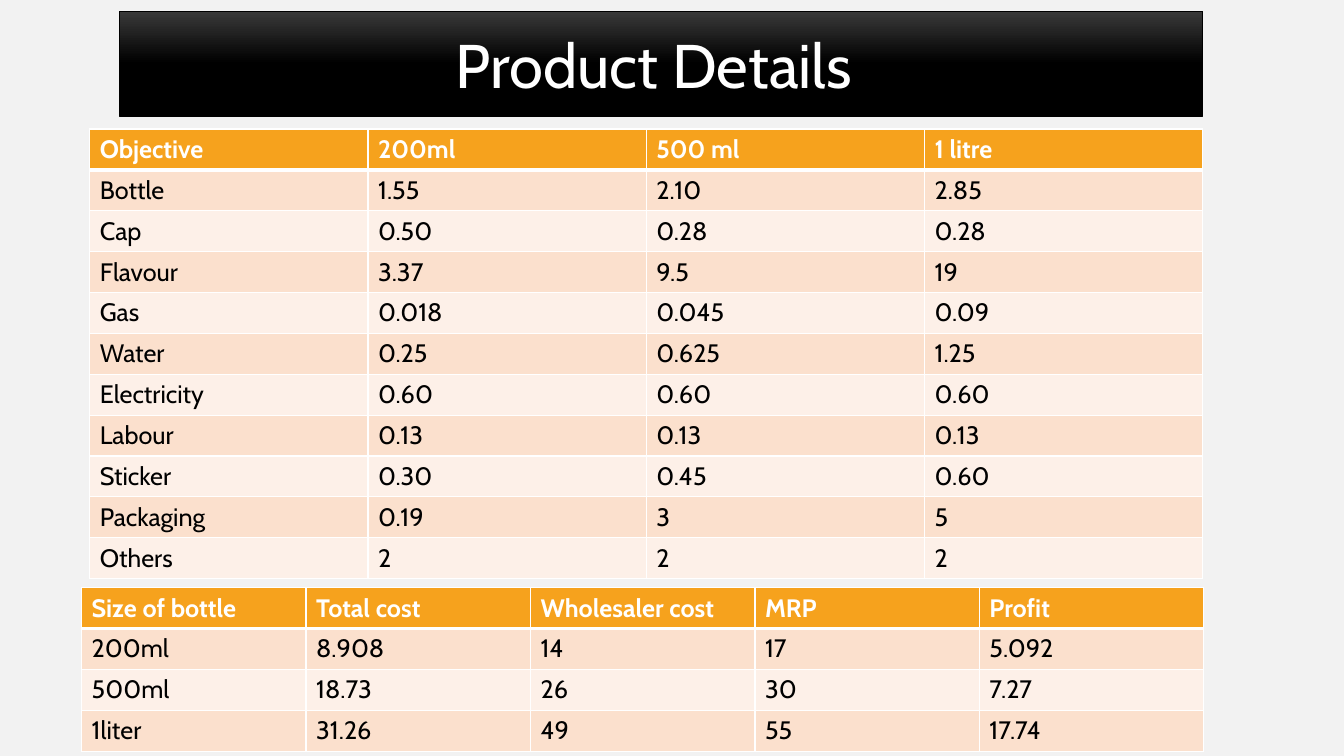
from dataclasses import dataclass

from lxml import etree
from pptx import Presentation
from pptx import util as u
from pptx.dml.color import RGBColor
from pptx.enum import text
from pptx.oxml import ns


@dataclass(frozen=True)
class Theme:
    """Colours, font and type sizes of the slide."""
    font: str = "Cabin"
    background: str = "F2F2F2"
    banner_top: str = "393939"
    black: str = "000000"
    white: str = "FFFFFF"
    header: str = "F6A21D"
    bands: tuple = ("FBE0CD", "FDF0E8")
    title_size: int = 44
    table_size: int = 18


THEME = Theme()
ROW_HEIGHT = 40

UNIT_COSTS = [
    ("Objective", "200ml", "500 ml", "1 litre"),
    ("Bottle", "1.55", "2.10", "2.85"),
    ("Cap", "0.50", "0.28", "0.28"),
    ("Flavour", "3.37", "9.5", "19"),
    ("Gas", "0.018", "0.045", "0.09"),
    ("Water", "0.25", "0.625", "1.25"),
    ("Electricity", "0.60", "0.60", "0.60"),
    ("Labour", "0.13", "0.13", "0.13"),
    ("Sticker", "0.30", "0.45", "0.60"),
    ("Packaging", "0.19", "3", "5"),
    ("Others", "2", "2", "2"),
]
BOTTLE_PRICES = [
    ("Size of bottle", "Total cost", "Wholesaler cost", "MRP", "Profit"),
    ("200ml", "8.908", "14", "17", "5.092"),
    ("500ml", "18.73", "26", "30", "7.27"),
    ("1liter", "31.26", "49", "55", "17.74"),
]


def px(length):
    """Turn px, at 100 to the inch, into EMU."""
    return u.Emu(length * 9144)


def write(frame, words, size, color, bold=False, align=text.PP_ALIGN.LEFT):
    """Put one formatted line of text into a text frame."""
    line = frame.paragraphs[0]
    line.alignment = align
    run = line.add_run()
    run.text = words
    run.font.name = THEME.font
    run.font.size = u.Pt(size)
    run.font.bold = bold
    run.font.color.rgb = RGBColor.from_string(color)


def add_banner(slide, box, words):
    """Place the title in a dark gradient banner."""
    banner = slide.shapes.title
    banner.left, banner.top, banner.width, banner.height = map(px, box)
    banner.fill.gradient()
    banner.fill.gradient_angle = 270
    shades = ((0, THEME.banner_top), (0.5, THEME.black))
    for stop, (position, color) in zip(banner.fill.gradient_stops, shades):
        stop.position = position
        stop.color.rgb = RGBColor.from_string(color)
    banner.line.color.rgb = RGBColor.from_string(THEME.black)
    banner.line.width = u.Pt(0.5)
    frame = banner.text_frame
    frame.word_wrap = True
    frame.auto_size = text.MSO_AUTO_SIZE.NONE
    frame.vertical_anchor = text.MSO_ANCHOR.MIDDLE
    write(frame, words, THEME.title_size, THEME.white, align=text.PP_ALIGN.CENTER)


def set_borders(cell, top, bottom):
    """Draw white borders round a cell, with widths in points."""
    properties = cell._tc.get_or_add_tcPr()
    for side, width in (("L", 1), ("R", 1), ("T", top), ("B", bottom)):
        edge = etree.SubElement(properties, ns.qn(f"a:ln{side}"), w=str(u.Pt(width)))
        paint = etree.SubElement(edge, ns.qn("a:solidFill"))
        etree.SubElement(paint, ns.qn("a:srgbClr"), val=THEME.white)


def add_price_table(slide, left, top, width, entries):
    """Place a table with an orange header and banded rows."""
    columns = len(entries[0])
    height = ROW_HEIGHT * len(entries)
    prices = slide.shapes.add_table(
        len(entries), columns, px(left), px(top), px(width), px(height)).table
    for row, values in enumerate(entries):
        is_header = row == 0
        fill = THEME.header if is_header else THEME.bands[(row - 1) % 2]
        color = THEME.white if is_header else THEME.black
        for column, value in enumerate(values):
            cell = prices.cell(row, column)
            set_borders(cell, top=3 if row == 1 else 1, bottom=3 if is_header else 1)
            cell.fill.solid()
            cell.fill.fore_color.rgb = RGBColor.from_string(fill)
            write(cell.text_frame, value, THEME.table_size, color, bold=is_header)


def main():
    """Build the product details slide and save it."""
    deck = Presentation()
    deck.slide_width, deck.slide_height = px(1333), px(750)
    slide = deck.slides.add_slide(deck.slide_layouts[5])
    slide.background.fill.solid()
    slide.background.fill.fore_color.rgb = RGBColor.from_string(THEME.background)
    add_banner(slide, (118, 11, 1075, 104), "Product Details ")
    add_price_table(slide, 89, 128, 1104, UNIT_COSTS)
    add_price_table(slide, 81, 583, 1113, BOTTLE_PRICES)
    deck.save("out.pptx")


if __name__ == "__main__":
    main()
